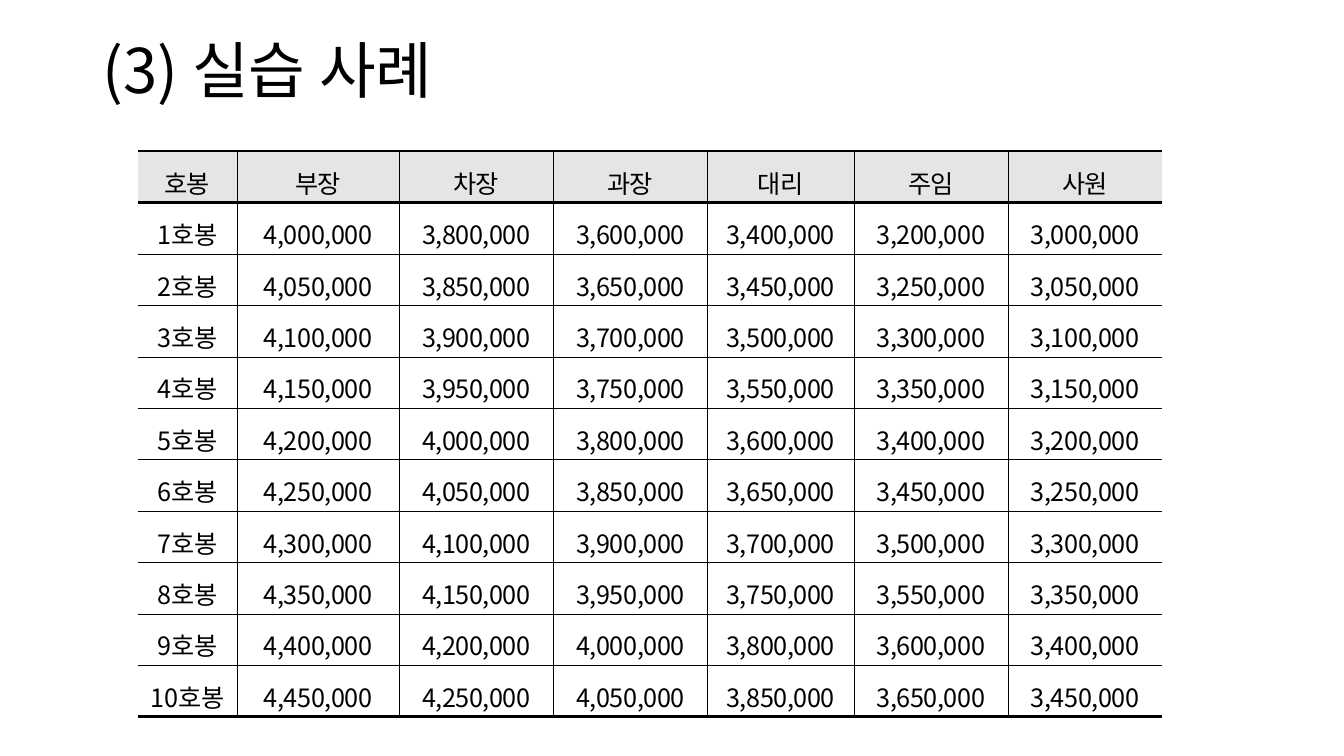
from lxml.etree import SubElement
from pptx import Presentation
from pptx.dml.color import RGBColor
from pptx.enum.text import MSO_ANCHOR as Anchor, MSO_AUTO_SIZE as AutoSize, PP_ALIGN as Align
from pptx.oxml.ns import qn
from pptx.util import Pt

BLACK = RGBColor(0x00, 0x00, 0x00)
HEADER_GREY = RGBColor(0xE5, 0xE5, 0xE5)
FONT = "Noto Sans CJK KR"

# Line widths in points
HAIRLINE, OUTER_RULE, HEADER_RULE = 0.28, 1.7, 1.98

RANKS = ["부장", "차장", "과장", "대리", "주임", "사원"]
STEPS = 10
TOP_SALARY, RANK_GAP, STEP_RAISE = 4_000_000, 200_000, 50_000
COLUMN_WIDTHS = [70.56, 115.92, 110.16, 110.16, 104.4, 110.16, 110.16]
HEADER_HEIGHT, STEP_HEIGHT = 35.28, 33.84


def style_paragraph(paragraph, size, line_spacing, tracking=0):
    paragraph.line_spacing = line_spacing
    font = paragraph.font
    font.name, font.size, font.color.rgb = FONT, Pt(size), BLACK
    properties = paragraph._p.pPr.find(qn("a:defRPr"))
    SubElement(properties, qn("a:ea")).set("typeface", FONT)
    if tracking:
        properties.set("spc", str(round(tracking * 100)))


def set_borders(cell, **widths):
    """Draw each side at its width in points; a width of 0 hides it."""
    properties = cell._tc.get_or_add_tcPr()
    for index, (side, width) in enumerate(widths.items()):
        border = properties.makeelement(qn(f"a:ln{side}"), {"w": str(Pt(width))})
        properties.insert(index, border)
        if width:
            fill = SubElement(border, qn("a:solidFill"))
            SubElement(fill, qn("a:srgbClr")).set("val", str(BLACK))
        else:
            SubElement(border, qn("a:noFill"))


def salary_rows():
    yield ["호봉", *RANKS]
    for step in range(STEPS):
        salaries = [TOP_SALARY - rank * RANK_GAP + step * STEP_RAISE
                    for rank in range(len(RANKS))]
        yield [f"{step + 1}호봉", *(f"{salary:,}" for salary in salaries)]


def add_title(slide, left, top, width, height):
    title = slide.shapes.title
    title.left, title.top, title.width, title.height = map(Pt, (left, top, width, height))
    frame = title.text_frame
    frame.text = "(3) 실습 사례"
    frame.auto_size = AutoSize.NONE
    frame.vertical_anchor = Anchor.MIDDLE
    frame.margin_bottom = Pt(60.6)  # lifts the line to the upper half
    frame.paragraphs[0].alignment = Align.LEFT
    style_paragraph(frame.paragraphs[0], 44, 0.9)


def add_salary_table(slide, left, top):
    rows = list(salary_rows())
    last_row, last_column = len(rows) - 1, len(RANKS)
    height = HEADER_HEIGHT + STEPS * STEP_HEIGHT
    table = slide.shapes.add_table(
        len(rows), len(COLUMN_WIDTHS), Pt(left), Pt(top),
        Pt(sum(COLUMN_WIDTHS)), Pt(height)).table
    table.first_row = table.horz_banding = False

    for column, width in zip(table.columns, COLUMN_WIDTHS):
        column.width = Pt(width)

    # Horizontal rules, from the top edge to the bottom edge
    rules = [OUTER_RULE, HEADER_RULE, *[HAIRLINE] * (STEPS - 1), OUTER_RULE]
    for r, texts in enumerate(rows):
        is_header = r == 0
        table.rows[r].height = Pt(HEADER_HEIGHT if is_header else STEP_HEIGHT)
        for c, text in enumerate(texts):
            cell = table.cell(r, c)
            cell.text = text
            cell.vertical_anchor = Anchor.MIDDLE
            cell.margin_left = cell.margin_right = Pt(1.44)
            cell.margin_top = cell.margin_bottom = Pt(1.44)
            if is_header:
                cell.fill.solid()
                cell.fill.fore_color.rgb = HEADER_GREY
            else:
                cell.fill.background()
            set_borders(cell, L=HAIRLINE if c else 0,
                        R=HAIRLINE if c < last_column else 0,
                        T=rules[r], B=rules[r + 1])
            paragraph = cell.text_frame.paragraphs[0]
            paragraph.alignment = Align.CENTER
            style_paragraph(paragraph, 18, 1.3, -0.7 if is_header else -0.3)


def main():
    deck = Presentation()
    deck.slide_width, deck.slide_height = Pt(960), Pt(540)
    slide = deck.slides.add_slide(deck.slide_layouts[5])
    add_title(slide, 66, 28.75, 828, 104.4)
    add_salary_table(slide, 98.64, 108)
    deck.save("out.pptx")


if __name__ == "__main__":
    main()
